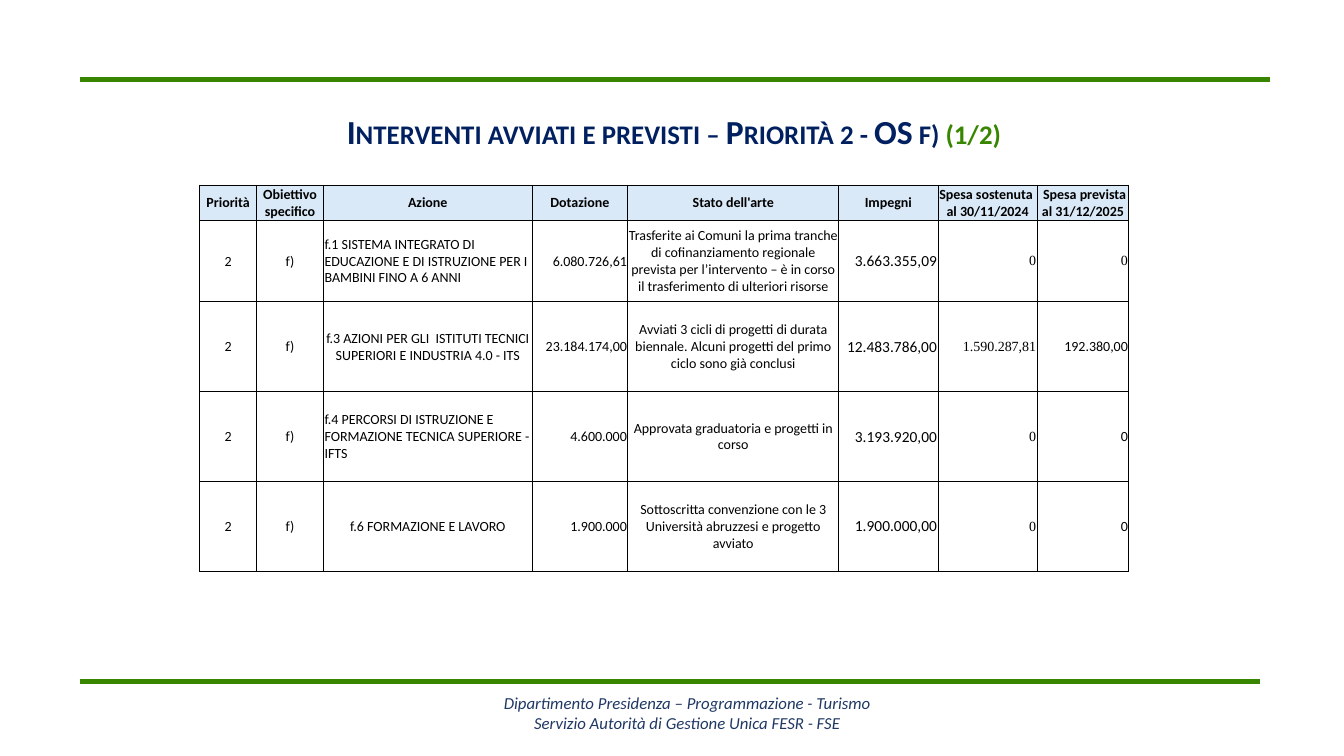
import pptx
import pptx.util
import pptx.dml.color
import pptx.enum.shapes
import pptx.enum.text
from lxml import etree

Pt = pptx.util.Pt
RGB = pptx.dml.color.RGBColor
ALIGN = pptx.enum.text.PP_ALIGN
ANCHOR = pptx.enum.text.MSO_ANCHOR

# Content
TITLE = "Interventi avviati e previsti – Priorità 2 - OS f) "
PART = "(1/2)"
FOOTER = [
    "Dipartimento Presidenza – Programmazione - Turismo",
    "Servizio Autorità di Gestione Unica FESR - FSE",
]
HEADS = [
    "Priorità", "Obiettivo specifico", "Azione", "Dotazione", "Stato dell'arte",
    "Impegni", "Spesa sostenuta \nal 30/11/2024", " Spesa prevista al 31/12/2025",
]
ROWS = [
    ["2", "f)",
     "f.1 SISTEMA INTEGRATO DI EDUCAZIONE E DI ISTRUZIONE PER I BAMBINI FINO A 6 ANNI",
     "6.080.726,61",
     "Trasferite ai Comuni la prima tranche di cofinanziamento regionale prevista "
     "per l’intervento – è in corso il trasferimento di ulteriori risorse",
     "3.663.355,09", "0", "0"],
    ["2", "f)",
     "f.3 AZIONI PER GLI  ISTITUTI TECNICI SUPERIORI E INDUSTRIA 4.0 - ITS",
     "23.184.174,00",
     "Avviati 3 cicli di progetti di durata biennale. Alcuni progetti del primo "
     "ciclo sono già conclusi",
     "12.483.786,00", "1.590.287,81", "192.380,00"],
    ["2", "f)",
     "f.4 PERCORSI DI ISTRUZIONE E FORMAZIONE TECNICA SUPERIORE - IFTS",
     "4.600.000", "Approvata graduatoria e progetti in corso",
     "3.193.920,00", "0", "0"],
    ["2", "f)", "f.6 FORMAZIONE E LAVORO", "1.900.000",
     "Sottoscritta convenzione con le 3 Università abruzzesi e progetto avviato",
     "1.900.000,00", "0", "0"],
]

# Format
GREEN = RGB(0x38, 0x86, 0x00)
NAVY = RGB(0x00, 0x20, 0x60)
BLUE = RGB(0x20, 0x38, 0x64)
PALE = RGB(0xDA, 0xE9, 0xF8)
BLACK = RGB(0, 0, 0)
SANS, SERIF = "Calibri", "Times New Roman"
WIDTHS = [40.5, 48, 148.8, 68.5, 150.6, 71, 70.8, 65.5]
HEIGHTS = [24, 58.2, 64.2, 64.2, 64.2]
RULES = [(56.9, 56.9, 907.2), (56.9, 486.7, 900)]
ACTION, GRANTS, SPENT, LAST = 2, 5, 6, 7
MONEY = (3, 5, 6, 7)
LEFT_ROWS = (1, 3)

deck = pptx.Presentation()
deck.slide_width, deck.slide_height = Pt(960), Pt(540)
slide = deck.slides.add_slide(deck.slide_layouts[6])


def write(para, text, size=10, font=SANS, color=BLACK, bold=False,
          italic=False, small=False, align=ALIGN.CENTER):
    para.alignment = align
    for i, line in enumerate(text.split("\n")):
        if i:
            para.add_line_break()
        run = para.add_run()
        run.text = line
        face = run.font
        face.size, face.name, face.bold, face.italic = Pt(size), font, bold, italic
        face.color.rgb = color
        if small:
            run._r.get_or_add_rPr().set("cap", "small")


def add_box(x, y, w, h):
    frame = slide.shapes.add_textbox(Pt(x), Pt(y), Pt(w), Pt(h)).text_frame
    frame.word_wrap = True
    return frame


def add_rule(x, y, end):
    line = slide.shapes.add_connector(
        pptx.enum.shapes.MSO_CONNECTOR.STRAIGHT, Pt(x), Pt(y), Pt(end), Pt(y))
    line.line.color.rgb, line.line.width = GREEN, Pt(3.25)
    etree.SubElement(line._element.spPr, pptx.oxml.ns.qn("a:effectLst"))


def add_edge(cell, side, width):
    qn = pptx.oxml.ns.qn
    edge = etree.SubElement(cell._tc.get_or_add_tcPr(), qn("a:ln" + side), w=str(Pt(width)))
    fill = etree.SubElement(edge, qn("a:solidFill"))
    etree.SubElement(fill, qn("a:srgbClr"), val=str(BLACK))


# Rules and footer
for rule in RULES:
    add_rule(*rule)
foot = add_box(37.4, 495, 907.2, 41)
foot.margin_top = foot.margin_bottom = 0
for i, line in enumerate(FOOTER):
    para = foot.add_paragraph() if i else foot.paragraphs[0]
    write(para, line, size=12, color=BLUE, italic=True)

# Title
head = add_box(56.2, 75.6, 850.3, 36).paragraphs[0]
write(head, TITLE, size=24, color=NAVY, bold=True, small=True)
write(head, PART, size=24, color=GREEN, bold=True, small=True)

# Table
table = slide.shapes.add_table(
    len(HEIGHTS), len(WIDTHS), Pt(142.7), Pt(132.4),
    Pt(sum(WIDTHS)), Pt(sum(HEIGHTS))).table
table.first_row = table.horz_banding = False
for col, width in zip(table.columns, WIDTHS):
    col.width = Pt(width)
for row, height in zip(table.rows, HEIGHTS):
    row.height = Pt(height)

for r, texts in enumerate([HEADS] + ROWS):
    for c, text in enumerate(texts):
        cell = table.cell(r, c)
        cell.vertical_anchor = ANCHOR.MIDDLE
        cell.margin_left = cell.margin_right = cell.margin_top = Pt(0.7)
        cell.margin_bottom = 0
        add_edge(cell, "L", 1 if c == 0 else 0.5)
        add_edge(cell, "R", 1 if c == LAST else 0.5)
        add_edge(cell, "T", 1 if r == 0 else 0.5)
        add_edge(cell, "B", 0.5)
        para = cell.text_frame.paragraphs[0]
        if r == 0:
            cell.fill.solid()
            cell.fill.fore_color.rgb = PALE
            write(para, text, bold=True)
            continue
        cell.fill.background()
        align = ALIGN.RIGHT if c in MONEY else ALIGN.CENTER
        if c == ACTION and r in LEFT_ROWS:
            align = ALIGN.LEFT
        serif = c == SPENT or (c == LAST and r == 1)
        write(para, text, size=11 if c == GRANTS else 10,
              font=SERIF if serif else SANS, align=align)

deck.save("out.pptx")
